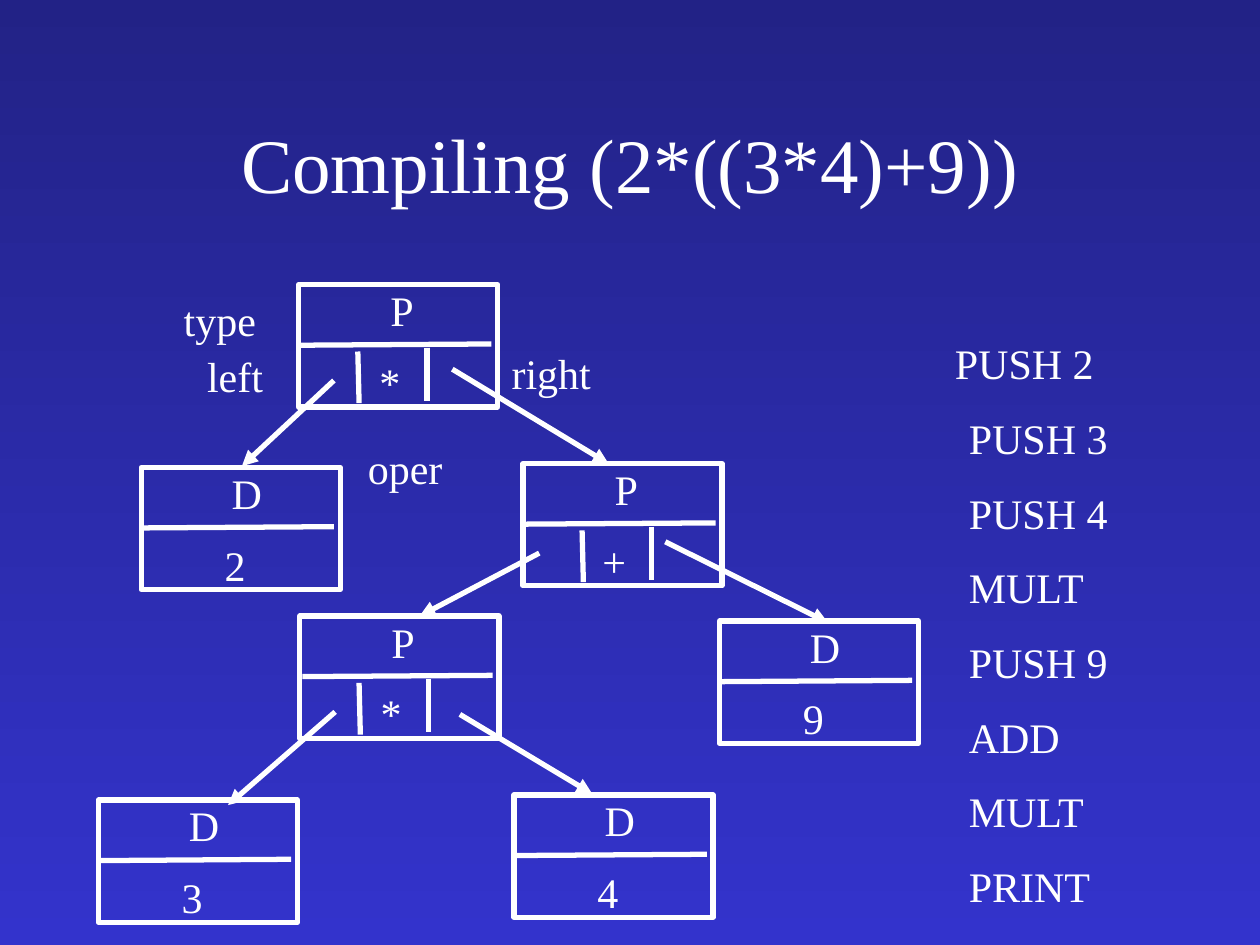
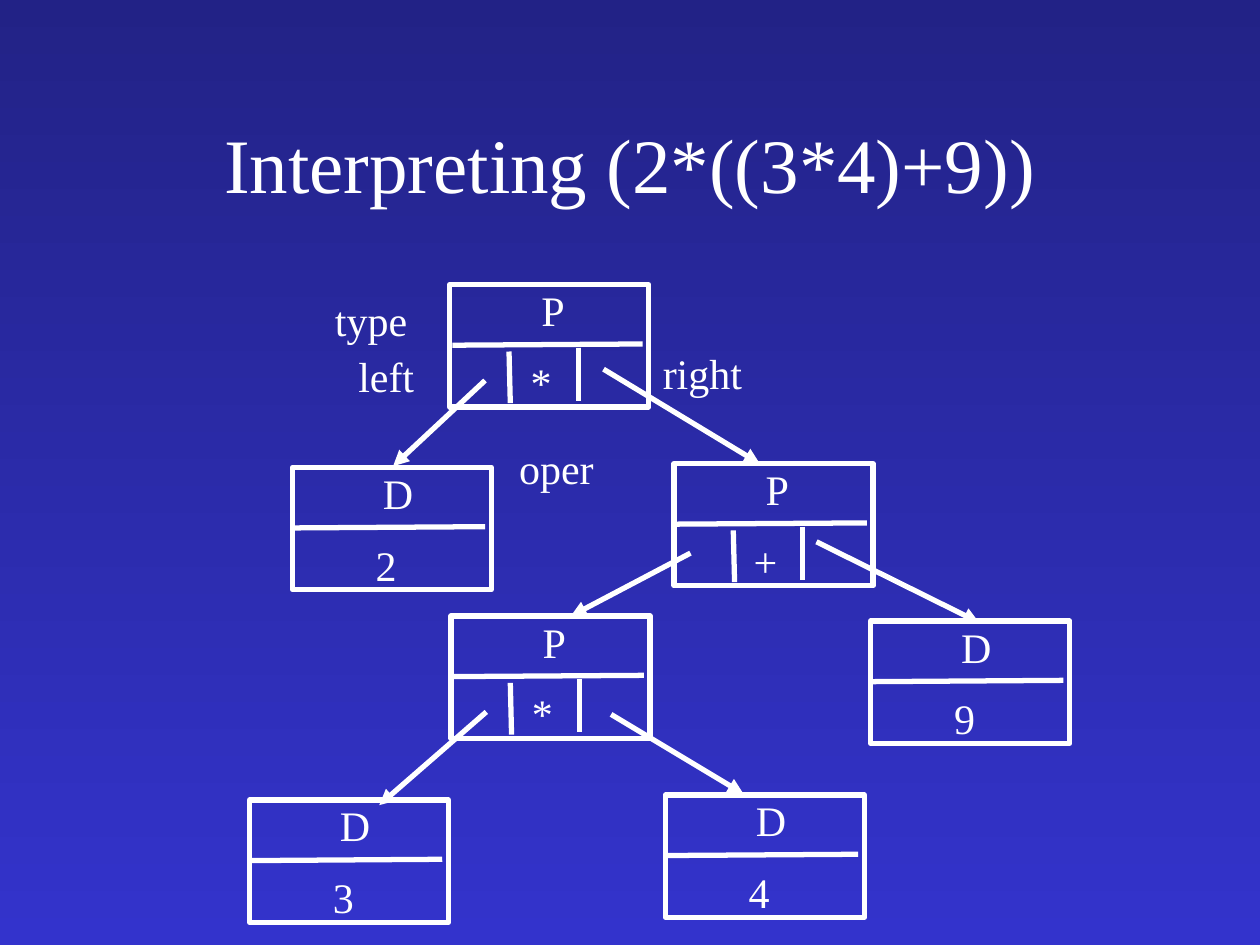
from pptx import Presentation
from pptx.dml.color import RGBColor
from pptx.enum.shapes import MSO_CONNECTOR, MSO_SHAPE
from pptx.enum.text import MSO_ANCHOR, PP_ALIGN
from pptx.oxml.ns import qn
from pptx.util import Inches, Pt
from lxml import etree

WHITE = RGBColor(0xFF, 0xFF, 0xFF)
NAVY = RGBColor(0x22, 0x22, 0x86)
BLUE = RGBColor(0x33, 0x33, 0xCC)
FONT = "Times New Roman"
LEFT, CENTER = PP_ALIGN.LEFT, PP_ALIGN.CENTER
MIDDLE = MSO_ANCHOR.MIDDLE
RECT = MSO_SHAPE.RECTANGLE
STRAIGHT = MSO_CONNECTOR.STRAIGHT

CODE = ["PUSH 2", "PUSH 3", "PUSH 4", "MULT", "PUSH 9", "ADD", "MULT", "PRINT"]
SLIDES = [
    ("Compiling (2*((3*4)+9))", 0, CODE),
    ("Interpreting (2*((3*4)+9))", 1.2, []),
]
NODES = [
    ("P", "*", 2.37, 2.26),
    ("P", "+", 4.15, 3.68),
    ("P", "*", 2.38, 4.89),
    ("D", "2", 1.12, 3.71),
    ("D", "9", 5.71, 4.93),
    ("D", "4", 4.08, 6.31),
    ("D", "3", 0.78, 6.35),
]
LABELS = [
    ("oper", 2.62, 3.46),
    ("type", 1.15, 2.29),
    ("left", 1.27, 2.73),
    ("right", 3.78, 2.71),
]
ARROWS = [
    (2.65, 3.02, 1.92, 3.7),
    (3.59, 2.93, 4.83, 3.68),
    (4.28, 4.39, 3.33, 4.89),
    (5.28, 4.3, 6.57, 4.94),
    (3.65, 5.67, 4.7, 6.3),
    (2.66, 5.65, 1.81, 6.39),
]
NODE_W, NODE_H, TEXT_H = 1.58, 0.97, 0.5
CODE_TOP, CODE_STEP = 2.63, 0.593


def style(frame, text, size=24, align=CENTER, wrap=True):
    frame.text = text
    frame.word_wrap = wrap
    para = frame.paragraphs[0]
    para.alignment = align
    font = para.runs[0].font
    font.name, font.size, font.color.rgb = FONT, Pt(size), WHITE


def write(shapes, text, x, y, width, **form):
    box = shapes.add_textbox(Inches(x), Inches(y), Inches(width), Inches(TEXT_H))
    style(box.text_frame, text, **form)


def draw(shapes, x1, y1, x2, y2, arrow=False):
    line = shapes.add_connector(STRAIGHT, *map(Inches, (x1, y1, x2, y2)))
    line.line.color.rgb, line.line.width = WHITE, Pt(3)
    if arrow:
        etree.SubElement(line.line._get_or_add_ln(), qn("a:tailEnd"), type="triangle")
    etree.SubElement(line._element.spPr, qn("a:effectLst"))


def add_node(slide, kind, value, x, y):
    shapes = slide.shapes.add_group_shape().shapes
    box = shapes.add_shape(RECT, *map(Inches, (x, y, NODE_W, NODE_H)))
    box.shadow.inherit = False
    box.fill.background()
    box.line.color.rgb, box.line.width = WHITE, Pt(3)
    draw(shapes, x + 0.02, y + 0.48, x + 1.53, y + 0.47)
    if kind == "P":
        draw(shapes, x + 0.47, y + 0.53, x + 0.48, y + 0.94)
        draw(shapes, x + 1.02, y + 0.5, x + 1.02, y + 0.92)
    shift = 0.53 if kind == "P" else 0.55
    write(shapes, kind, x + 0.62, y - 0.05, 0.4, wrap=False)
    write(shapes, value, x + shift, y + 0.52, 0.39, wrap=False)


def add_slide(deck, title, shift, code):
    slide = deck.slides.add_slide(deck.slide_layouts[5])
    head = slide.shapes.title
    head.left, head.top, head.width, head.height = map(Inches, (0.75, 0.67, 8.5, 1.25))
    style(head.text_frame, title, size=44)
    head.text_frame.vertical_anchor = MIDDLE
    for row, text in enumerate(code):
        x, width = (7.59, 2.29) if row else (7.48, 1.81)
        write(slide.shapes, text, x, CODE_TOP + row * CODE_STEP, width, align=LEFT)
    for kind, value, x, y in NODES:
        add_node(slide, kind, value, x + shift, y)
    for text, x, y in LABELS:
        write(slide.shapes, text, x + shift, y, 1.19)
    for x1, y1, x2, y2 in ARROWS:
        draw(slide.shapes, x1 + shift, y1, x2 + shift, y2, arrow=True)


def main():
    """Build the two expression tree slides."""
    deck = Presentation()
    deck.slide_width, deck.slide_height = Inches(10), Inches(7.5)
    fill = deck.slide_master.background.fill
    fill.gradient()
    fill.gradient_angle = 270
    for stop, place, color in zip(fill.gradient_stops, (0, 1), (NAVY, BLUE)):
        stop.position, stop.color.rgb = place, color
    for title, shift, code in SLIDES:
        add_slide(deck, title, shift, code)
    deck.save("out.pptx")


if __name__ == "__main__":
    main()
